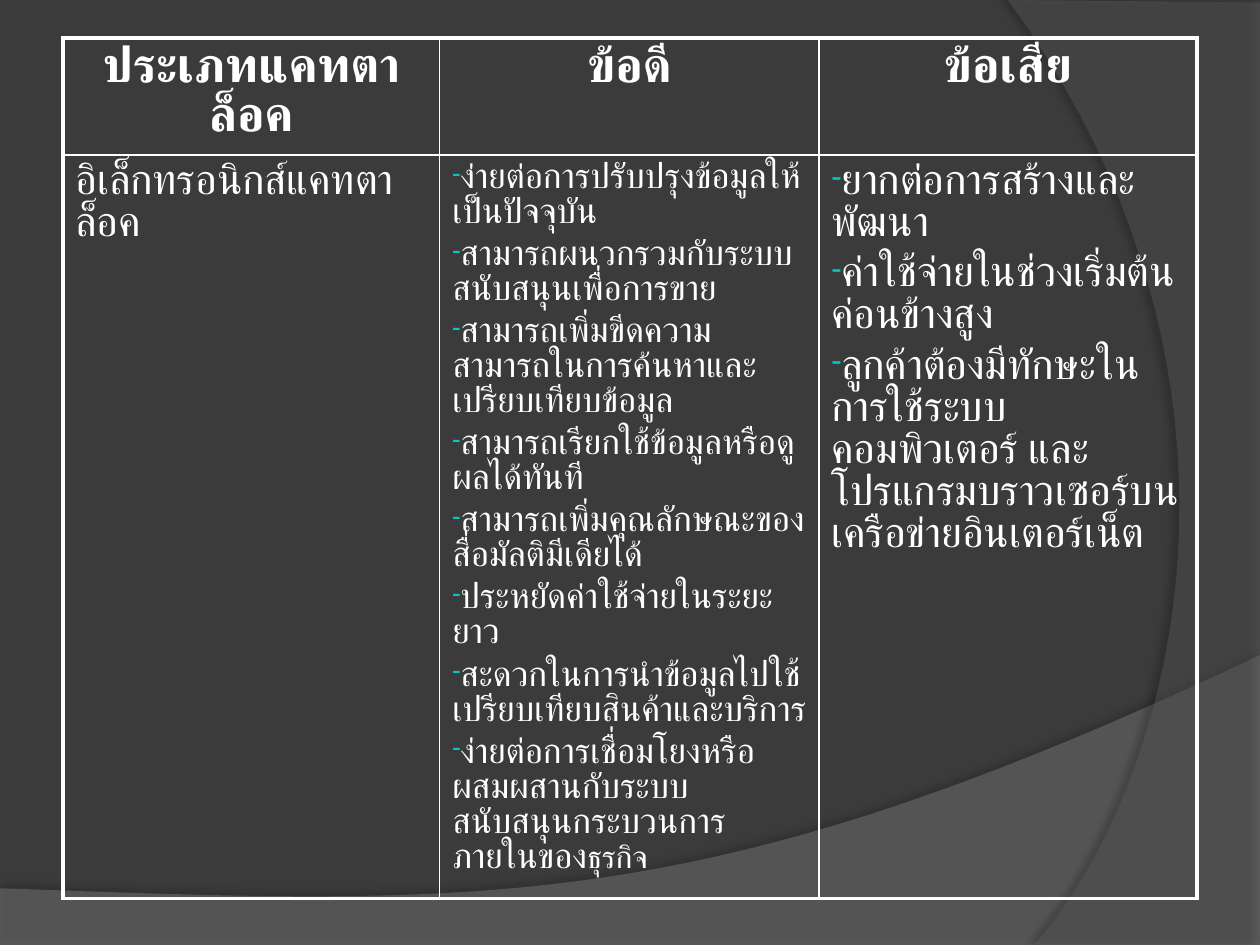
from lxml.etree import SubElement
from pptx import Presentation
from pptx.dml.color import RGBColor
from pptx.enum.text import PP_ALIGN
from pptx.oxml import parse_xml
from pptx.oxml.ns import nsdecls, qn
from pptx.util import Inches, Pt

# Content
FONT = "Times New Roman"
WHITE, BULLET = "FFFFFF", "00C8C3"
HEADERS = ["ประเภทแคทตาล็อค", "ข้อดี", "ข้อเสีย"]
CATALOG_TYPE = "อิเล็กทรอนิกส์แคทตาล็อค"
ADVANTAGES = [
    "ง่ายต่อการปรับปรุงข้อมูลให้เป็นปัจจุบัน",
    "สามารถผนวกรวมกับระบบสนับสนุนเพื่อการขาย",
    "สามารถเพิ่มขีดความสามารถในการค้นหาและเปรียบเทียบข้อมูล",
    "สามารถเรียกใช้ข้อมูลหรือดูผลได้ทันที",
    "สามารถเพิ่มคุณลักษณะของสื่อมัลติมีเดียได้",
    "ประหยัดค่าใช้จ่ายในระยะยาว",
    "สะดวกในการนำข้อมูลไปใช้เปรียบเทียบสินค้าและบริการ",
    "ง่ายต่อการเชื่อมโยงหรือผสมผสานกับระบบสนับสนุนกระบวนการภายในของ",
]
LAST_WORD = "ธุรกิจ"
DISADVANTAGES = [
    "ยากต่อการสร้างและพัฒนา",
    "ค่าใช้จ่ายในช่วงเริ่มต้นค่อนข้างสูง",
    "ลูกค้าต้องมีทักษะในการใช้ระบบคอมพิวเตอร์ และโปรแกรมบราวเซอร์บนเครือข่ายอินเตอร์เน็ต",
]
COLUMN_WIDTHS = [2.99, 3.01, 3]
ROW_HEIGHTS = [0.93, 5.9]


def color(hex_code):
    return RGBColor.from_string(hex_code)


def curve(start, control_1, control_2, end, steps=40):
    """Points along a cubic curve, after its start."""
    points = []
    for step in range(1, steps + 1):
        t = step / steps
        weights = ((1 - t) ** 3, 3 * t * (1 - t) ** 2, 3 * t * t * (1 - t), t ** 3)
        corners = (start, control_1, control_2, end)
        points.append(tuple(sum(w * c[axis] for w, c in zip(weights, corners))
                            for axis in (0, 1)))
    return points


def add_swoosh(slide, points, fill, opacity, shadow_opacity, distance, direction):
    corners = [(Inches(x), Inches(y)) for x, y in points]
    builder = slide.shapes.build_freeform(*corners[0])
    builder.add_line_segments(corners[1:], close=True)
    swoosh = builder.convert_to_shape()
    swoosh.fill.solid()
    swoosh.fill.fore_color.rgb = color(fill)
    swoosh.line.fill.background()
    tint = swoosh.element.spPr.find(".//" + qn("a:srgbClr"))
    SubElement(tint, qn("a:alpha"), val=str(opacity * 1000))
    swoosh.element.spPr.append(parse_xml(
        f'<a:effectLst {nsdecls("a")}><a:outerShdw blurRad="{Pt(4)}" dist="{Pt(distance)}" '
        f'dir="{direction * 60000}" algn="ctr" rotWithShape="0"><a:srgbClr val="000000">'
        f'<a:alpha val="{shadow_opacity * 1000}"/></a:srgbClr></a:outerShdw></a:effectLst>'))


def add_span(para, text, size, bold):
    span = para.add_run()
    span.text = text
    span.font.size, span.font.bold, span.font.name = Pt(size), bold, FONT
    span.font.color.rgb = color(WHITE)
    # Thai text takes the complex-script font
    SubElement(span.font._element, qn("a:cs"), typeface=FONT)


def fill_cell(cell, texts, size, bold=False, centered=False, bulleted=False):
    for index, text in enumerate(texts):
        frame = cell.text_frame
        para = frame.paragraphs[0] if index == 0 else frame.add_paragraph()
        para.alignment = PP_ALIGN.CENTER if centered else PP_ALIGN.LEFT
        para.line_spacing = Pt(size)
        para.space_before = Pt(size * 0.2 if index else 0)
        if bulleted:
            properties = para._p.get_or_add_pPr()
            properties.set("marL", "0")
            properties.set("indent", "0")
            bullet_color = SubElement(properties, qn("a:buClr"))
            SubElement(bullet_color, qn("a:srgbClr"), val=BULLET)
            SubElement(properties, qn("a:buSzPct"), val="70000")
            SubElement(properties, qn("a:buChar"), char="-")
        add_span(para, text, size, bold)


def set_borders(cell, widths):
    cell.fill.background()
    properties = cell._tc.get_or_add_tcPr()
    for index, (side, width) in enumerate(widths.items()):
        properties.insert(index, parse_xml(
            f'<a:ln{side} {nsdecls("a")} w="{Pt(width)}"><a:solidFill>'
            f'<a:srgbClr val="{WHITE}"/></a:solidFill></a:ln{side}>'))


deck = Presentation()
deck.slide_width, deck.slide_height = Inches(10), Inches(7.5)
slide = deck.slides.add_slide(deck.slide_layouts[6])

# Background
slide.background.fill.solid()
slide.background.fill.fore_color.rgb = color("3B3B3B")
bottom_swoosh = [(0, 7.05), (0, 7.5), (10, 7.5), (10, 5.2)]
bottom_swoosh += curve((10, 5.2), (5.59, 7.29), (3.91, 7.19), (0, 7.05))
right_swoosh = [(10, 0.02), (10, 7.5), (8.21, 7.5)]
right_swoosh += curve((8.21, 7.5), (9.35, 6.19), (10.18, 3), (8, 0))
add_swoosh(slide, bottom_swoosh, "7F7F7F", 45, 35, 3.5, 270)
add_swoosh(slide, right_swoosh, "5E5E5E", 40, 45, 4, 180)

# Table
table = slide.shapes.add_table(2, 3, Inches(0.5), Inches(0.3), Inches(sum(COLUMN_WIDTHS)),
                               Inches(sum(ROW_HEIGHTS))).table
table.first_row = table.horz_banding = False
for column, width in zip(table.columns, COLUMN_WIDTHS):
    column.width = Inches(width)
for row, height in zip(table.rows, ROW_HEIGHTS):
    row.height = Inches(height)

# Cell text
for index, header in enumerate(HEADERS):
    fill_cell(table.cell(0, index), [header], 28, bold=True, centered=True)
fill_cell(table.cell(1, 0), [CATALOG_TYPE], 24)
fill_cell(table.cell(1, 1), ADVANTAGES, 20, bulleted=True)
add_span(table.cell(1, 1).text_frame.paragraphs[-1], LAST_WORD, 18, False)
fill_cell(table.cell(1, 2), DISADVANTAGES, 24, bulleted=True)

# Borders: thick outside, thin inside
for row in range(2):
    for column in range(3):
        outer = {"L": column == 0, "R": column == 2, "T": row == 0, "B": row == 1}
        set_borders(table.cell(row, column),
                    {side: 2.25 if edge else 1 for side, edge in outer.items()})

deck.save("out.pptx")
